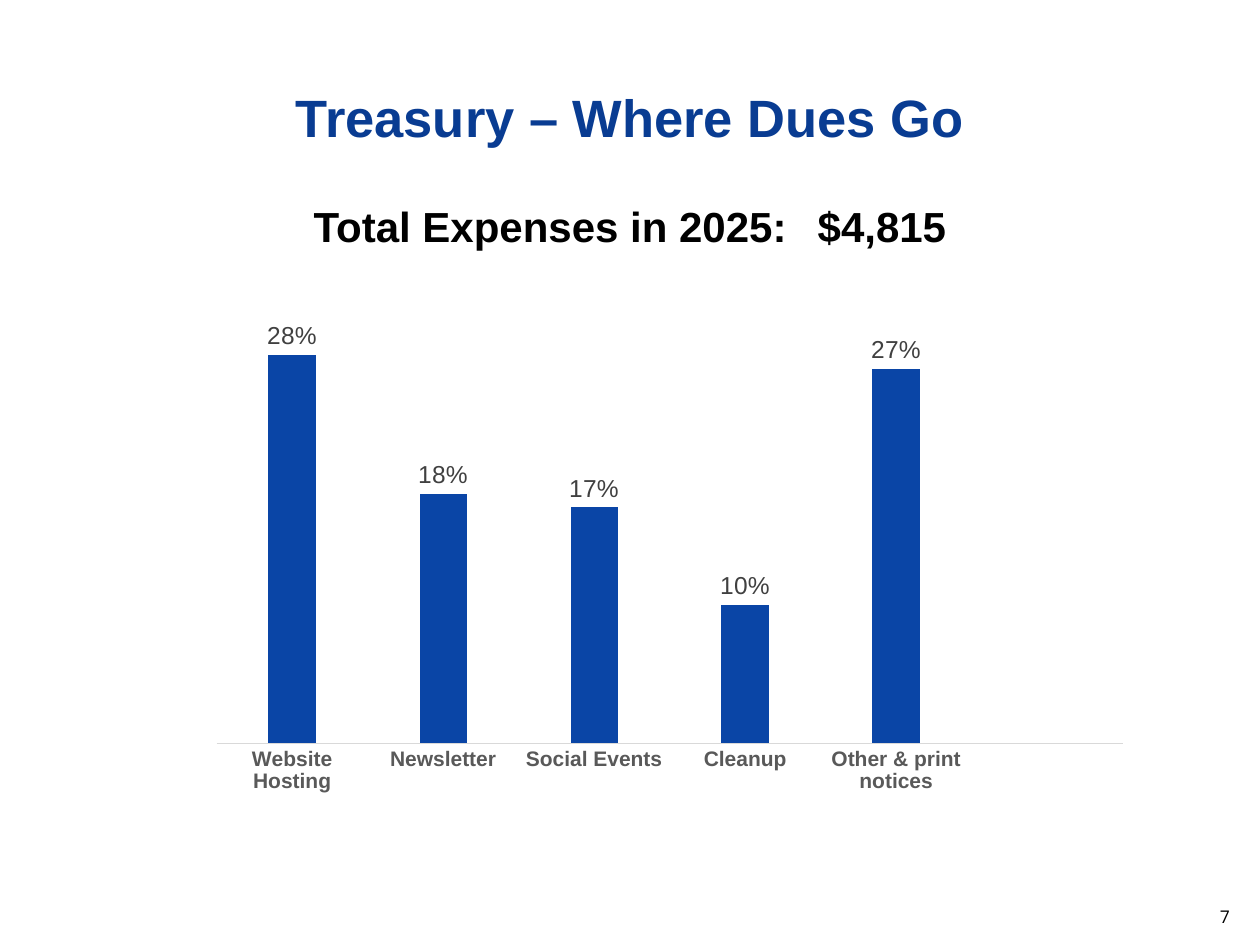
from pptx import Presentation
from pptx.chart.data import CategoryChartData
from pptx.dml.color import RGBColor
from pptx.enum.chart import XL_CHART_TYPE, XL_LABEL_POSITION, XL_TICK_MARK
from pptx.enum.text import MSO_ANCHOR, PP_ALIGN
from pptx.util import Pt

COLUMNS = XL_CHART_TYPE.COLUMN_CLUSTERED
OUTSIDE_END = XL_LABEL_POSITION.OUTSIDE_END
NO_TICK = XL_TICK_MARK.NONE
MIDDLE, TOP, BOTTOM = MSO_ANCHOR.MIDDLE, MSO_ANCHOR.TOP, MSO_ANCHOR.BOTTOM
CENTER, RIGHT = PP_ALIGN.CENTER, PP_ALIGN.RIGHT


def color(value):
    return RGBColor.from_string(value)


def format_font(font, name, size, value, bold=False):
    font.name = name
    font.size = Pt(size)
    font.bold = bold
    font.color.rgb = color(value)


presentation = Presentation()
presentation.slide_width = Pt(720)
presentation.slide_height = Pt(540)
slide = presentation.slides.add_slide(presentation.slide_layouts[5])

title = slide.shapes.title
title.left, title.top, title.width, title.height = Pt(36), Pt(21.6), Pt(648), Pt(90)
total = slide.shapes.add_textbox(Pt(36), Pt(116.64), Pt(648), Pt(356.4))
page_number = slide.shapes.add_textbox(Pt(681.12), Pt(504.72), Pt(28.8), Pt(28.8))

for shape, text, anchor, alignment, name, size, value, bold in [
    (title, "Treasury – Where Dues Go", MIDDLE, CENTER, "Arial", 30, "093C92", True),
    (total, "Total Expenses in 2025: \t$4,815", TOP, CENTER, "Arial", 24, "000000", True),
    (page_number, "7", BOTTOM, RIGHT, "Open Sans", 10, "000000", False),
]:
    text_frame = shape.text_frame
    text_frame.word_wrap = True
    text_frame.vertical_anchor = anchor
    text_frame.text = text
    paragraph = text_frame.paragraphs[0]
    paragraph.alignment = alignment
    format_font(paragraph.runs[0].font, name, size, value, bold)
total.text_frame.paragraphs[0].line_spacing = 0.8

expenses = CategoryChartData(number_format="0%")
expenses.categories = [
    "Website Hosting", "Newsletter", "Social Events", "Cleanup", "Other & print notices", "",
]
expenses.add_series("Series 1", [0.28, 0.18, 0.17, 0.1, 0.27, None])
chart = slide.shapes.add_chart(
    COLUMNS, Pt(113.04), Pt(181.44), Pt(539.28), Pt(277.2), expenses
).chart
chart.has_legend = False
chart.has_title = False
format_font(chart.font, "Arial", 10, "000000")

category_axis = chart.category_axis
category_axis.major_tick_mark = NO_TICK
category_axis.format.line.color.rgb = color("D9D9D9")
category_axis.format.line.width = Pt(0.75)
format_font(category_axis.tick_labels.font, "Arial", 12, "595959", True)

value_axis = chart.value_axis
value_axis.visible = False
value_axis.has_major_gridlines = False
value_axis.minimum_scale = 0
value_axis.maximum_scale = 0.3

plot = chart.plots[0]
plot.gap_width = 219
plot.overlap = -27
plot.vary_by_categories = False
series = plot.series[0]
series.format.fill.solid()
series.format.fill.fore_color.rgb = color("0A45A6")

labels = series.data_labels
labels.show_value = True
labels.number_format = "0%"
labels.number_format_is_linked = False
labels.position = OUTSIDE_END
format_font(labels.font, "Arial", 14, "404040")

presentation.save("out.pptx")
